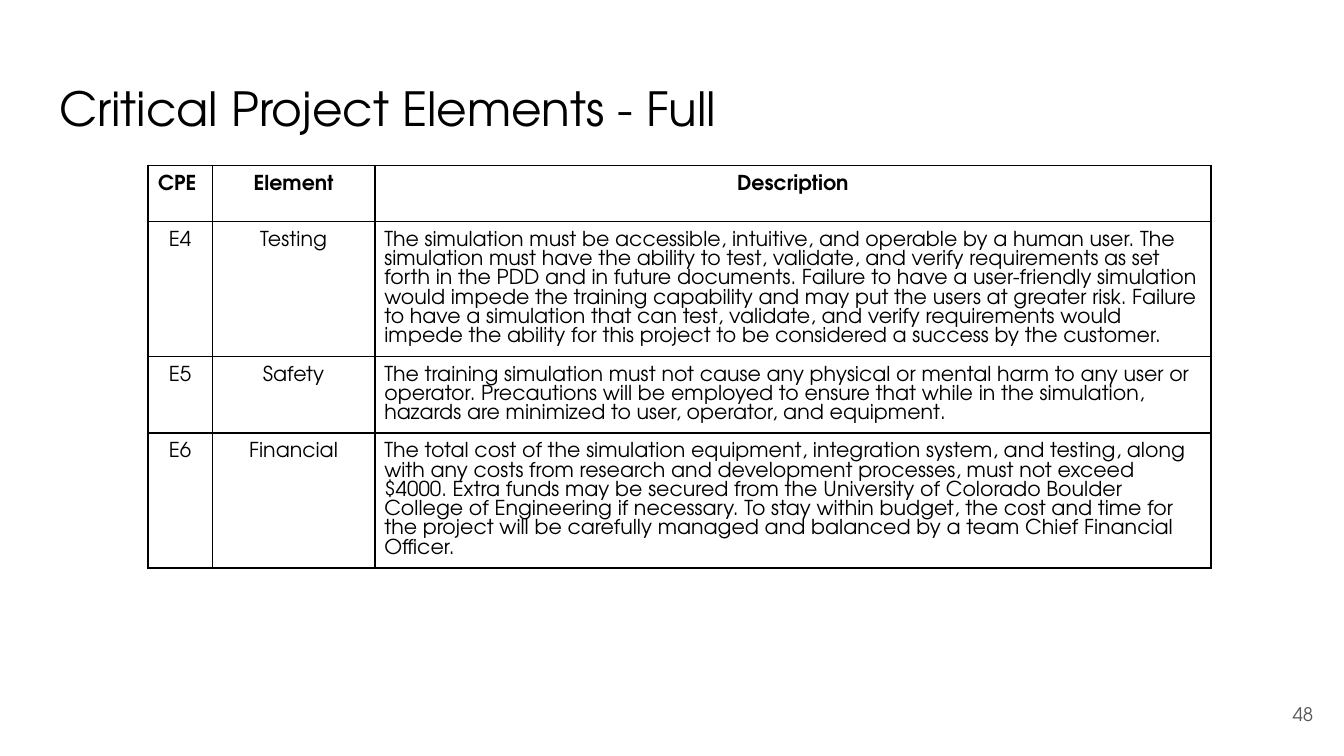
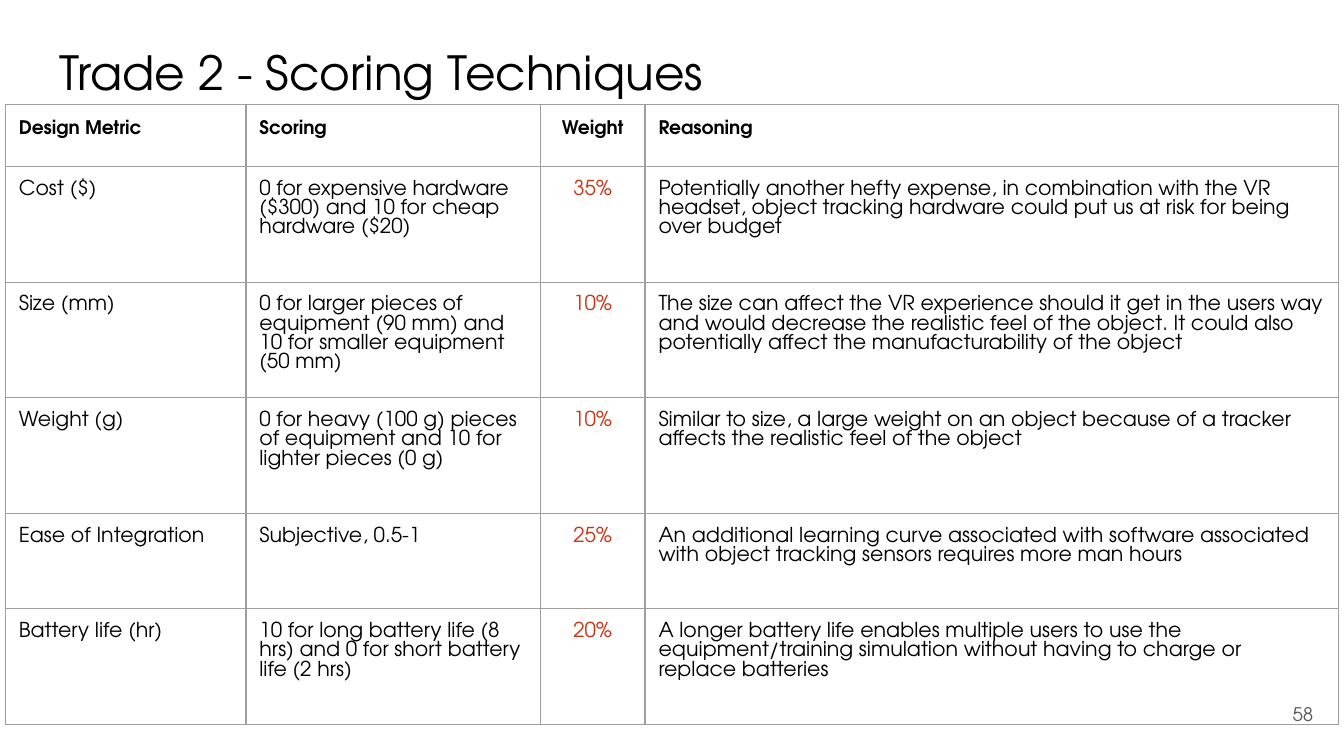
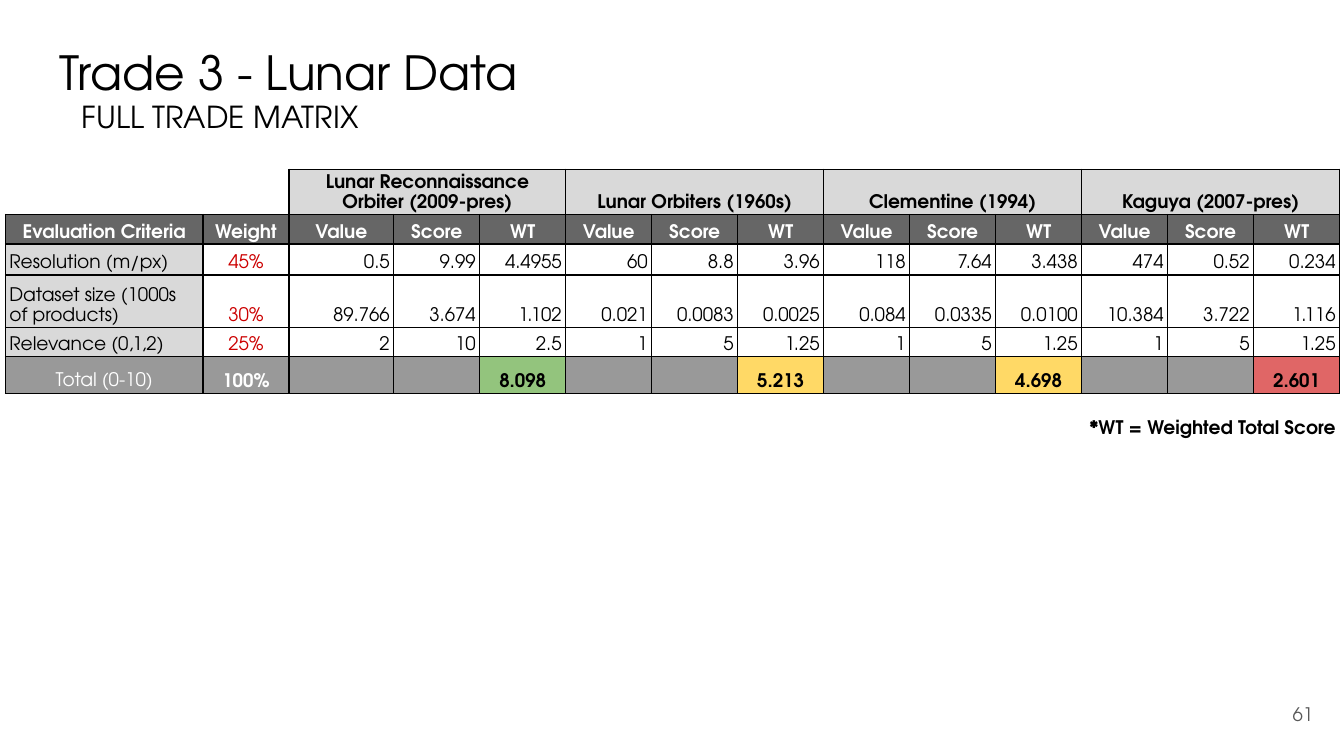
from dataclasses import dataclass

from lxml import etree
from pptx import Presentation
from pptx import util as u
from pptx.dml.color import RGBColor
from pptx.enum import text
from pptx.oxml.ns import qn


@dataclass(frozen=True)
class Theme:
    font: str = "TeX Gyre Adventor"
    black: str = "000000"
    white: str = "FFFFFF"
    number: str = "595959"
    grid: str = "9E9E9E"
    orange: str = "CC3311"
    red: str = "CC0000"
    light: str = "D9D9D9"
    middle: str = "999999"
    dark: str = "666666"
    good: str = "93C47D"
    fair: str = "FFD966"
    poor: str = "E06666"
    title: float = 25.2
    subtitle: float = 16.2
    body: float = 11
    small: float = 10
    body_line: float = 10.35
    matrix_line: float = 10.7


theme = Theme()
LEFT, CENTER, RIGHT = text.PP_ALIGN.LEFT, text.PP_ALIGN.CENTER, text.PP_ALIGN.RIGHT
TOP, MIDDLE, BOTTOM = text.MSO_ANCHOR.TOP, text.MSO_ANCHOR.MIDDLE, text.MSO_ANCHOR.BOTTOM


def write(holder, frame, words, size, color=theme.black, bold=False, align=LEFT,
          anchor=TOP, margins=(0.1, 0.1), spacing=1.0):
    holder.margin_left = holder.margin_right = u.Inches(margins[0])
    holder.margin_top = holder.margin_bottom = u.Inches(margins[1])
    holder.vertical_anchor = anchor
    paragraph = frame.paragraphs[0]
    paragraph.text = words
    paragraph.alignment = align
    paragraph.line_spacing = spacing
    for run in paragraph.runs:
        run.font.name = theme.font
        run.font.size = u.Pt(size)
        run.font.bold = bold
        run.font.color.rgb = RGBColor.from_string(color)
    if not words:
        etree.SubElement(paragraph._p, qn("a:endParaRPr"), sz=str(int(size * 100)))


def add_grid(slide, left, top, columns, rows, color, weight, white_edges):
    frame = slide.shapes.add_table(len(rows), len(columns), u.Inches(left), u.Inches(top),
                                   u.Inches(sum(columns)), u.Inches(sum(rows)))
    table = frame.table
    table.first_row = table.horz_banding = False
    for column, width in zip(table.columns, columns):
        column.width = u.Inches(width)
    for row, height in zip(table.rows, rows):
        row.height = u.Inches(height)
    for r in range(len(rows)):
        for c in range(len(columns)):
            cell = table.cell(r, c)
            properties = cell._tc.get_or_add_tcPr()
            for side in "LRTB":
                edge_color = theme.white if side in white_edges.get((r, c), "") else color
                line = etree.SubElement(properties, qn(f"a:ln{side}"), w=str(u.Pt(weight)))
                fill = etree.SubElement(line, qn("a:solidFill"))
                etree.SubElement(fill, qn("a:srgbClr"), val=edge_color)
            cell.fill.background()
    return table


presentation = Presentation()
presentation.slide_width = u.Inches(10)
presentation.slide_height = presentation.slide_width * 9 // 16

slides = []
for title, title_top, number in [
    ("Critical Project Elements - Full", 0.49, "48"),
    ("Trade 2 - Scoring Techniques", 0.22, "58"),
    ("Trade 3 - Lunar Data", 0.22, "61"),
]:
    slide = presentation.slides.add_slide(presentation.slide_layouts[5])
    heading = slide.shapes.title
    heading.left, heading.top = u.Inches(0.34), u.Inches(title_top)
    heading.width, heading.height = u.Inches(9.32), u.Inches(0.63)
    heading.text_frame.auto_size = text.MSO_AUTO_SIZE.NONE
    write(heading.text_frame, heading.text_frame, title, theme.title)
    box = slide.shapes.add_textbox(u.Inches(9.27), u.Inches(5.1), u.Inches(0.6), u.Inches(0.43))
    box.text_frame.word_wrap = True
    write(box.text_frame, box.text_frame, number, theme.small, theme.number,
          align=RIGHT, anchor=MIDDLE)
    slides.append(slide)
elements_slide, scoring_slide, matrix_slide = slides

elements = [
    ("CPE ", "Element", "Description"),
    ("E4", "Testing",
     "The simulation must be accessible, intuitive, and operable by a human user. The simulation "
     "must have the ability to test, validate, and verify requirements as set forth in the PDD and "
     "in future documents. Failure to have a user-friendly simulation would impede the training "
     "capability and may put the users at greater risk. Failure to have a simulation that can test, "
     "validate, and verify requirements would impede the ability for this project to be considered "
     "a success by the customer."),
    ("E5", "Safety",
     "The training simulation must not cause any physical or mental harm to any user or operator. "
     "Precautions will be employed to ensure that while in the simulation, hazards are minimized "
     "to user, operator, and equipment."),
    ("E6", "Financial",
     "The total cost of the simulation equipment, integration system, and testing, along with any "
     "costs from research and development processes, must not exceed $4000. Extra funds may be "
     "secured from the University of Colorado Boulder College of Engineering if necessary. To stay "
     "within budget, the cost and time for the project will be carefully managed and balanced by a "
     "team Chief Financial Officer."),
]
table = add_grid(elements_slide, 1.1, 1.23, [0.48, 1.21, 6.22], [0.42] * 4, theme.black, 1, {})
for r, row in enumerate(elements):
    for c, words in enumerate(row):
        cell = table.cell(r, c)
        write(cell, cell.text_frame, words, theme.body, bold=r == 0,
              align=LEFT if r and c == 2 else CENTER, margins=(0.07, 0.07),
              spacing=u.Pt(theme.body_line))

metrics = [
    ("Design Metric", "Scoring", "Weight", "Reasoning"),
    ("Cost ($)", "0 for expensive hardware ($300) and 10 for cheap hardware ($20)", "35%",
     "Potentially another hefty expense, in combination with the VR headset, object tracking "
     "hardware could put us at risk for being over budget"),
    ("Size (mm)", "0 for larger pieces of equipment (90 mm) and 10 for smaller equipment (50 mm)",
     "10%",
     "The size can affect the VR experience should it get in the users way and would decrease the "
     "realistic feel of the object. It could also potentially affect the manufacturability of the "
     "object"),
    ("Weight (g)", "0 for heavy (100 g) pieces of equipment and 10 for lighter pieces (0 g)", "10%",
     "Similar to size, a large weight on an object because of a tracker affects the realistic feel "
     "of the object"),
    ("Ease of Integration", "Subjective, 0.5-1", "25%",
     "An additional learning curve associated with software associated with object tracking "
     "sensors requires more man hours"),
    ("Battery life (hr)", "10 for long battery life (8 hrs) and 0 for short battery life (2 hrs)",
     "20%",
     "A longer battery life enables multiple users to use the equipment/training simulation "
     "without having to charge or replace batteries"),
]
table = add_grid(scoring_slide, 0.04, 0.78, [1.79, 2.19, 0.78, 5.16],
                 [0.46, 0.86, 0.86, 0.86, 0.71, 0.86], theme.grid, 0.75, {})
for r, row in enumerate(metrics):
    for c, words in enumerate(row):
        cell = table.cell(r, c)
        write(cell, cell.text_frame, words, theme.body if r else theme.small,
              theme.orange if r and c == 2 else theme.black, bold=r == 0,
              align=CENTER if c == 2 else LEFT, spacing=u.Pt(theme.body_line))

sources = ["Lunar Reconnaissance Orbiter (2009-pres)", "Lunar Orbiters (1960s)",
           "Clementine (1994)", "Kaguya (2007-pres)"]
totals = [("8.098", theme.good), ("5.213", theme.fair), ("4.698", theme.fair),
          ("2.601", theme.poor)]
matrix = [
    ["", ""] + [words for source in sources for words in (source, "", "")],
    ["Evaluation Criteria", "Weight"] + ["Value", "Score", "WT"] * len(sources),
    ["Resolution (m/px)", "45%", "0.5", "9.99", "4.4955", "60", "8.8", "3.96",
     "118", "7.64", "3.438", "474", "0.52", "0.234"],
    ["Dataset size (1000s of products)", "30%", "89.766", "3.674", "1.102", "0.021", "0.0083",
     "0.0025", "0.084", "0.0335", "0.0100", "10.384", "3.722", "1.116"],
    ["Relevance (0,1,2)", "25%", "2", "10", "2.5", "1", "5", "1.25",
     "1", "5", "1.25", "1", "5", "1.25"],
    ["Total (0-10)", "100%"] + [words for total, _ in totals for words in ("", "", total)],
]
table = add_grid(matrix_slide, 0.04, 1.26, [1.47, 0.64, 0.78] + [0.64] * 11,
                 [0.27, 0.22, 0.23, 0.39, 0.22, 0.27], theme.black, 0.75,
                 {(0, 0): "LTR", (0, 1): "LT"})
for r, row in enumerate(matrix):
    for c, words in enumerate(row):
        cell = table.cell(r, c)
        color, fill, bold, align = theme.black, None, False, RIGHT
        if r == 0:
            fill, bold, align = theme.light if c > 1 else None, True, CENTER
        elif r == 1:
            color, fill, bold, align = theme.white, theme.dark, True, CENTER
        elif r == 5:
            color = theme.white if c < 2 else theme.black
            fill = totals[c // 3 - 1][1] if c > 1 and words else theme.middle
            bold, align = c > 0, CENTER
        elif c == 0:
            fill, align = theme.light, LEFT
        elif c == 1:
            color, fill, align = theme.red, theme.white, CENTER
        write(cell, cell.text_frame, words, theme.small, color, bold, align, BOTTOM,
              (0.03, 0.02), u.Pt(theme.matrix_line))
        if fill:
            cell.fill.solid()
            cell.fill.fore_color.rgb = RGBColor.from_string(fill)
for first in range(2, 14, 3):
    table.cell(0, first).merge(table.cell(0, first + 2))

subtitle = matrix_slide.shapes.add_textbox(u.Inches(0.51), u.Inches(0.63),
                                           u.Inches(4.49), u.Inches(0.47))
subtitle.text_frame.word_wrap = True
write(subtitle.text_frame, subtitle.text_frame, "FULL TRADE MATRIX", theme.subtitle)

note = matrix_slide.shapes.add_textbox(u.Inches(7.76), u.Inches(3.01),
                                       u.Inches(2.52), u.Inches(0.37))
note.text_frame.word_wrap = True
note.text_frame.auto_size = text.MSO_AUTO_SIZE.SHAPE_TO_FIT_TEXT
write(note.text_frame, note.text_frame, "*WT = Weighted Total Score", theme.small,
      bold=True, align=CENTER)

presentation.save("out.pptx")
